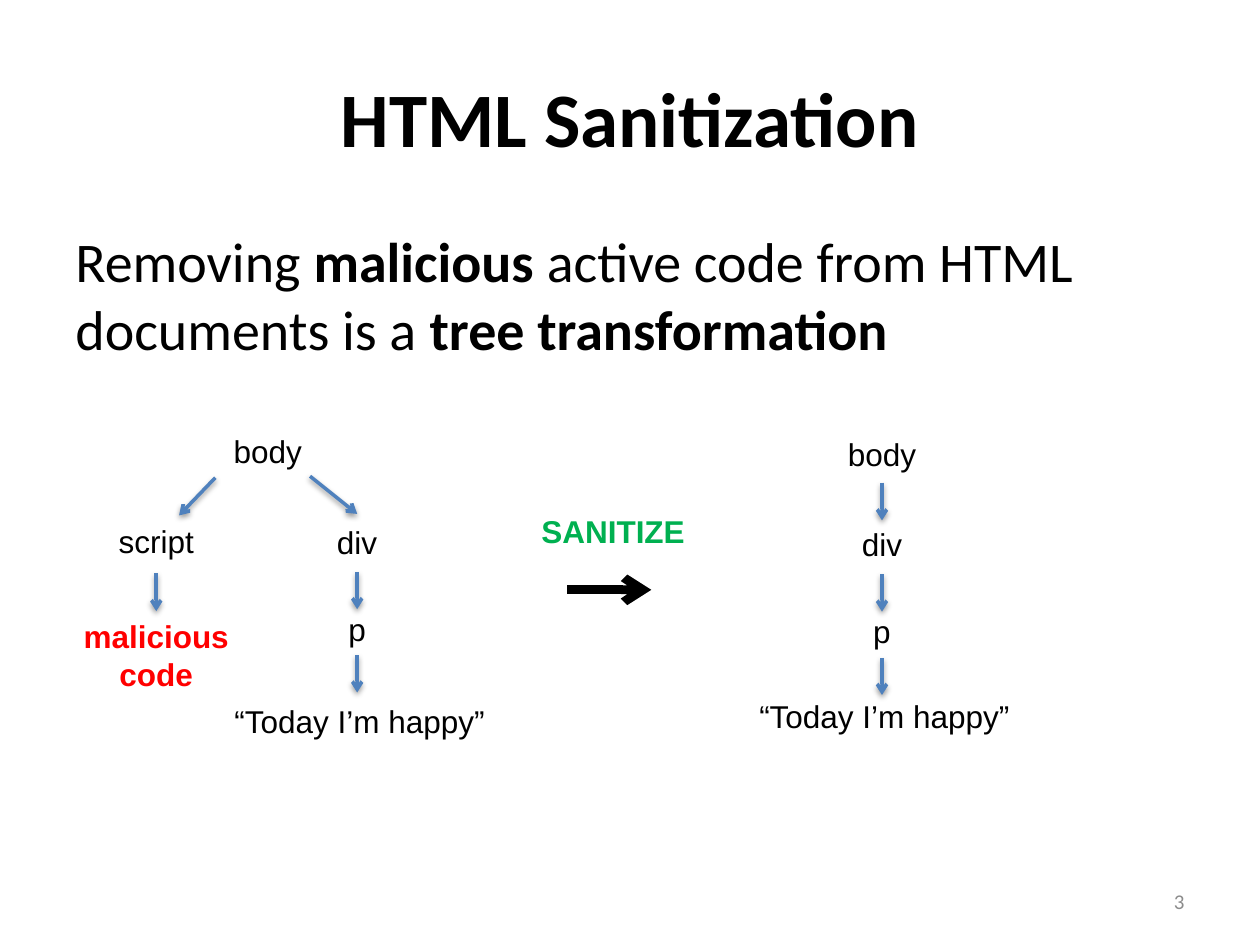
from lxml import etree
from pptx import Presentation
from pptx.dml.color import RGBColor
from pptx.enum.shapes import MSO_CONNECTOR
from pptx.enum.text import MSO_ANCHOR, MSO_AUTO_SIZE, PP_ALIGN
from pptx.oxml import parse_xml
from pptx.oxml.ns import qn
from pptx.util import Cm, Pt

LEFT, CENTER, RIGHT = PP_ALIGN.LEFT, PP_ALIGN.CENTER, PP_ALIGN.RIGHT
TOP, MIDDLE = MSO_ANCHOR.TOP, MSO_ANCHOR.MIDDLE
FIT_SHAPE = MSO_AUTO_SIZE.SHAPE_TO_FIT_TEXT
STRAIGHT = MSO_CONNECTOR.STRAIGHT

COLORS = {
    "text": "000000",
    "edge": "4F81BD",
    "danger": "FF0000",
    "sanitize": "00B050",
    "page": "8C8C8C",
}
SHADOW = (
    '<a:effectLst xmlns:a="http://schemas.openxmlformats.org/drawingml/2006/main">'
    '<a:outerShdw blurRad="40000" dist="20000" dir="5400000" rotWithShape="0">'
    '<a:srgbClr val="000000"><a:alpha val="38000"/></a:srgbClr>'
    "</a:outerShdw></a:effectLst>"
)
NODE_WIDTHS = {
    "body": 1.9,
    "script": 2.06,
    "div": 1.32,
    "p": 0.86,
    "“Today I’m happy”": 5.61,
    "malicious\ncode": 3.48,
    "SANITIZE": 3.43,
}


class TreeSlide:
    def __init__(self, slide):
        self.slide = slide
        self.heading_font = "Calibri"
        self.node_font = "Arial"

    def style(self, paragraph, font, size, color, align, bold=None):
        paragraph.alignment = align
        paragraph.font.name = font
        paragraph.font.size = Pt(size)
        paragraph.font.bold = bold
        paragraph.font.color.rgb = RGBColor.from_string(COLORS[color])

    def text(self, box, runs, size, align, anchor=TOP, color="text"):
        """Add one wrapped paragraph; runs are (wording, bold) pairs."""
        frame = self.slide.shapes.add_textbox(*map(Cm, box)).text_frame
        frame.word_wrap = True
        frame.vertical_anchor = anchor
        paragraph = frame.paragraphs[0]
        self.style(paragraph, self.heading_font, size, color, align)
        for wording, bold in runs:
            run = paragraph.add_run()
            run.text = wording
            run.font.bold = bold
        return paragraph

    def node(self, label, center, top, color="text", bold=False):
        width = NODE_WIDTHS[label]
        height = 1.8 if "\n" in label else 1.03
        box = self.slide.shapes.add_textbox(
            Cm(center - width / 2), Cm(top), Cm(width), Cm(height))
        frame = box.text_frame
        frame.word_wrap = False
        frame.auto_size = FIT_SHAPE
        frame.text = label
        for paragraph in frame.paragraphs:
            self.style(paragraph, self.node_font, 18, color, CENTER, bold)

    def arrow(self, start, end, color="edge", width=2, shadow=True):
        line = self.slide.shapes.add_connector(STRAIGHT, *map(Cm, (*start, *end)))
        line.line.width = Pt(width)
        line.line.color.rgb = RGBColor.from_string(COLORS[color])
        etree.SubElement(line.line._get_or_add_ln(), qn("a:tailEnd"), type="arrow")
        properties = line._element.spPr
        if shadow:
            properties.append(parse_xml(SHADOW))
        else:
            etree.SubElement(properties, qn("a:effectLst"))


def main():
    prs = Presentation()
    prs.slide_width, prs.slide_height = Cm(25.4), Cm(19.05)
    page = TreeSlide(prs.slides.add_slide(prs.slide_layouts[6]))

    page.text((1.27, 0.76, 22.86, 3.18), [("HTML Sanitization", True)],
              44, CENTER, MIDDLE)
    statement = page.text((1.27, 4.45, 22.86, 12.57), [
        ("Removing ", False),
        ("malicious ", True),
        ("active code from HTML documents is a ", False),
        ("tree transformation", True),
    ], 32, LEFT)
    statement.space_before = Pt(6.4)

    # Tree before sanitization
    script_x, branch_x, clean_x = 3.15, 7.2, 17.78
    page.node("body", 5.4, 8.59)
    page.node("script", script_x, 10.39)
    page.node("malicious\ncode", script_x, 12.32, "danger", True)
    page.arrow((4.34, 9.63), (3.61, 10.39))
    page.arrow((6.25, 9.6), (branch_x, 10.36))
    page.arrow((script_x, 11.56), (script_x, 12.32))

    # The div branch survives, so both trees share it
    for center, top, happy_top in ((branch_x, 10.41, 14.02), (clean_x, 10.46, 13.92)):
        page.node("div", center, top)
        page.node("p", center, top + 1.76)
        page.node("“Today I’m happy”", center + 0.05, happy_top)
        for offset in (1.12, 2.8):
            page.arrow((center, top + offset), (center, top + offset + 0.75))

    # Root of the tree after sanitization
    page.node("body", clean_x, 8.64)
    page.arrow((clean_x, 9.73), (clean_x, 10.49))

    page.node("SANITIZE", 12.36, 10.19, "sanitize", True)
    page.arrow((11.43, 11.89), (13.13, 11.89), "text", 5, shadow=False)

    page.text((18.21, 17.65, 5.92, 1.02), [("3", False)], 12, RIGHT, MIDDLE, "page")
    prs.save("out.pptx")


if __name__ == "__main__":
    main()
